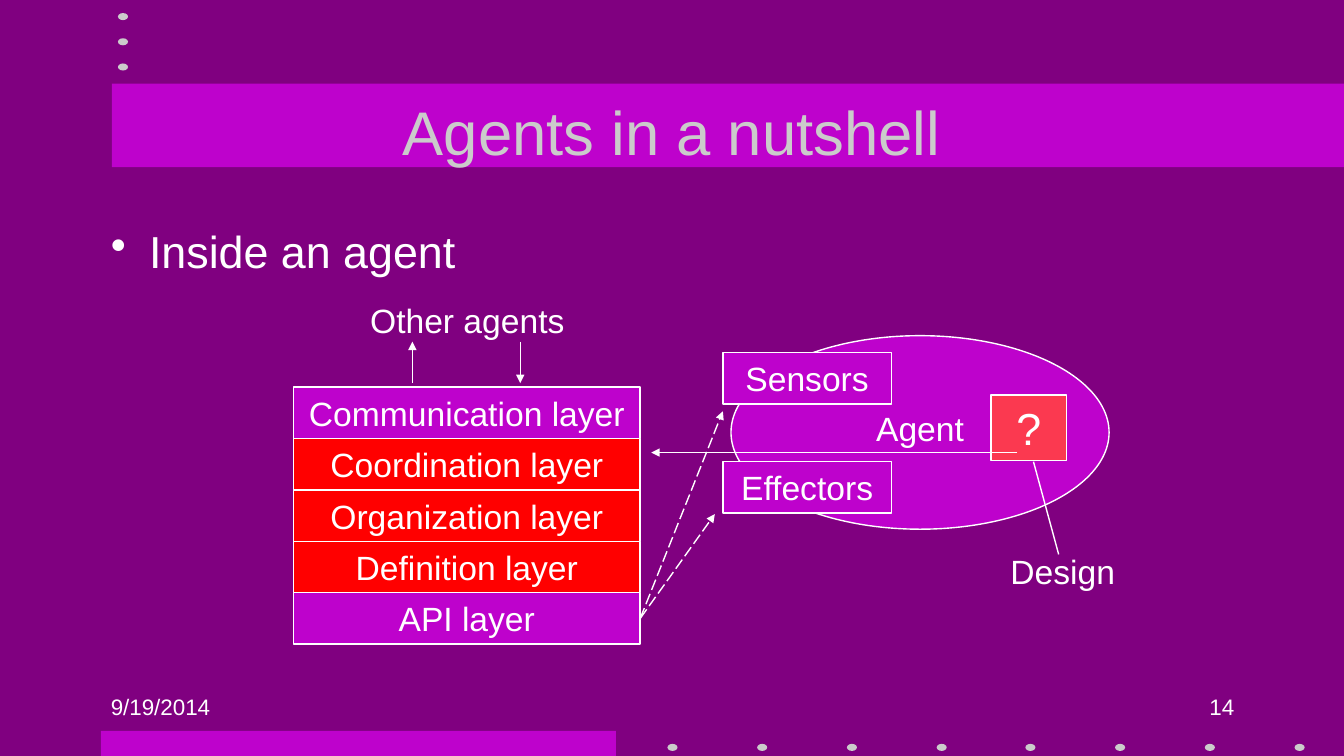
from lxml import etree
from pptx import Presentation
from pptx import util as u
from pptx.dml.color import RGBColor
from pptx.enum import dml, shapes, text
from pptx.oxml.ns import qn

PX = 9144
HUES = {"back": "800080", "band": "BE02CC", "dot": "CBCBCB",
        "ink": "FFFFFF", "core": "FF0000", "query": "FB3950"}
RECT = shapes.MSO_SHAPE.RECTANGLE
OVAL = shapes.MSO_SHAPE.OVAL
LEFT, MID, RIGHT = text.PP_ALIGN.LEFT, text.PP_ALIGN.CENTER, text.PP_ALIGN.RIGHT


def px(*nums):
    return [n * PX for n in nums]


def hue(name):
    return RGBColor.from_string(HUES[name])


def write(shape, words, size, align, color="ink", anchor=text.MSO_ANCHOR.TOP):
    frame = shape.text_frame
    frame.text = words
    frame.word_wrap = True
    frame.vertical_anchor = anchor
    para = frame.paragraphs[0]
    para.alignment = align
    font = para.runs[0].font
    font.name, font.size = "Arial", u.Pt(size)
    font.color.rgb = hue(color)
    return para


def label(slide, box, words, size=24, align=MID, **look):
    return write(slide.shapes.add_textbox(*px(*box)), words, size, align, **look)


def block(slide, kind, box, fill, line=True):
    shape = slide.shapes.add_shape(kind, *px(*box))
    shape.shadow.inherit = False
    shape.fill.solid()
    shape.fill.fore_color.rgb = hue(fill)
    if line:
        shape.line.color.rgb = hue("ink")
        shape.line.width = u.Pt(1)
    else:
        shape.line.fill.background()
    return shape


def panel(slide, box, words, fill="band", size=24):
    shape = block(slide, RECT, box, fill)
    write(shape, words, size, MID, anchor=text.MSO_ANCHOR.MIDDLE)
    return shape


def link(slide, start, end, head=True, dash=False):
    line = slide.shapes.add_connector(shapes.MSO_CONNECTOR.STRAIGHT, *px(*start, *end))
    line.line.color.rgb = hue("ink")
    line.line.width = u.Pt(1)
    if dash:
        line.line.dash_style = dml.MSO_LINE.LONG_DASH
    if head:
        etree.SubElement(line.line._get_or_add_ln(), qn("a:tailEnd"), type="triangle")
    etree.SubElement(line._element.spPr, qn("a:effectLst"))
    return line


def dots(slide, x, y, count, dx, dy):
    for i in range(count):
        block(slide, OVAL, (x + round(i * dx), y + i * dy, 10, 7), "dot", False)


def footer(slide, x, y):
    block(slide, RECT, (x, y + 42, 511, 25), "band", False)
    dots(slide, x + 562, y + 55, 8, 88.86, 0)
    label(slide, (x, y, 278, 50), "9/19/2014", 16, LEFT)
    label(slide, (x + 856, y, 278, 50), "14", 16, RIGHT)


def header(slide, x, y):
    block(slide, RECT, (x, y, 1222, 83), "band", False)
    dots(slide, x + 6, y - 70, 3, 0, 25)
    label(slide, (x + 97, y - 16, 917, 125), "Agents in a nutshell", 44,
          color="dot", anchor=text.MSO_ANCHOR.MIDDLE)


def body(slide, x, y):
    para = label(slide, (x, y, 1025, 450), "Inside an agent", 32, LEFT)
    props = para._p.get_or_add_pPr()
    props.set("marL", str(38 * PX))
    props.set("indent", str(-38 * PX))
    etree.SubElement(props, qn("a:buChar"), char="•")


def layers(slide, x, y):
    names = ["Communication", "Coordination", "Organization", "Definition", "API"]
    for i, name in enumerate(names):
        fill = "core" if 0 < i < 4 else "band"
        last = panel(slide, (x, y + 51 * i, 344, 51), name + " layer", fill)
    label(slide, (x + 39, y - 91, 267, 50), "Other agents")
    link(slide, (x + 118, y - 4), (x + 118, y - 45))
    link(slide, (x + 225, y - 45), (x + 225, y - 4))
    return last


def agent(slide, x, y):
    block(slide, OVAL, (x, y, 375, 192), "band")
    label(slide, (x + 15, y + 67, 345, 50), "Agent")
    panel(slide, (x - 8, y + 125, 167, 51), "Effectors")
    panel(slide, (x - 8, y + 17, 167, 51), "Sensors")
    panel(slide, (x + 258, y + 59, 75, 65), "?", "query", 32)
    link(slide, (x + 300, y + 125), (x + 325, y + 217), head=False)
    label(slide, (x + 250, y + 209, 158, 50), "Design")
    link(slide, (x + 284, y + 116), (x - 79, y + 116))


def main():
    deck = Presentation()
    deck.slide_width, deck.slide_height = px(1333, 750)
    slide = deck.slides.add_slide(deck.slide_layouts[6])
    slide.background.fill.solid()
    slide.background.fill.fore_color.rgb = hue("back")
    footer(slide, 100, 683)
    header(slide, 111, 83)
    body(slide, 100, 217)
    api = layers(slide, 291, 384)
    agent(slide, 725, 333)
    for end in ((717, 408), (709, 510)):
        link(slide, (635, 613), end, dash=True).begin_connect(api, 3)
    deck.save("out.pptx")


if __name__ == "__main__":
    main()
